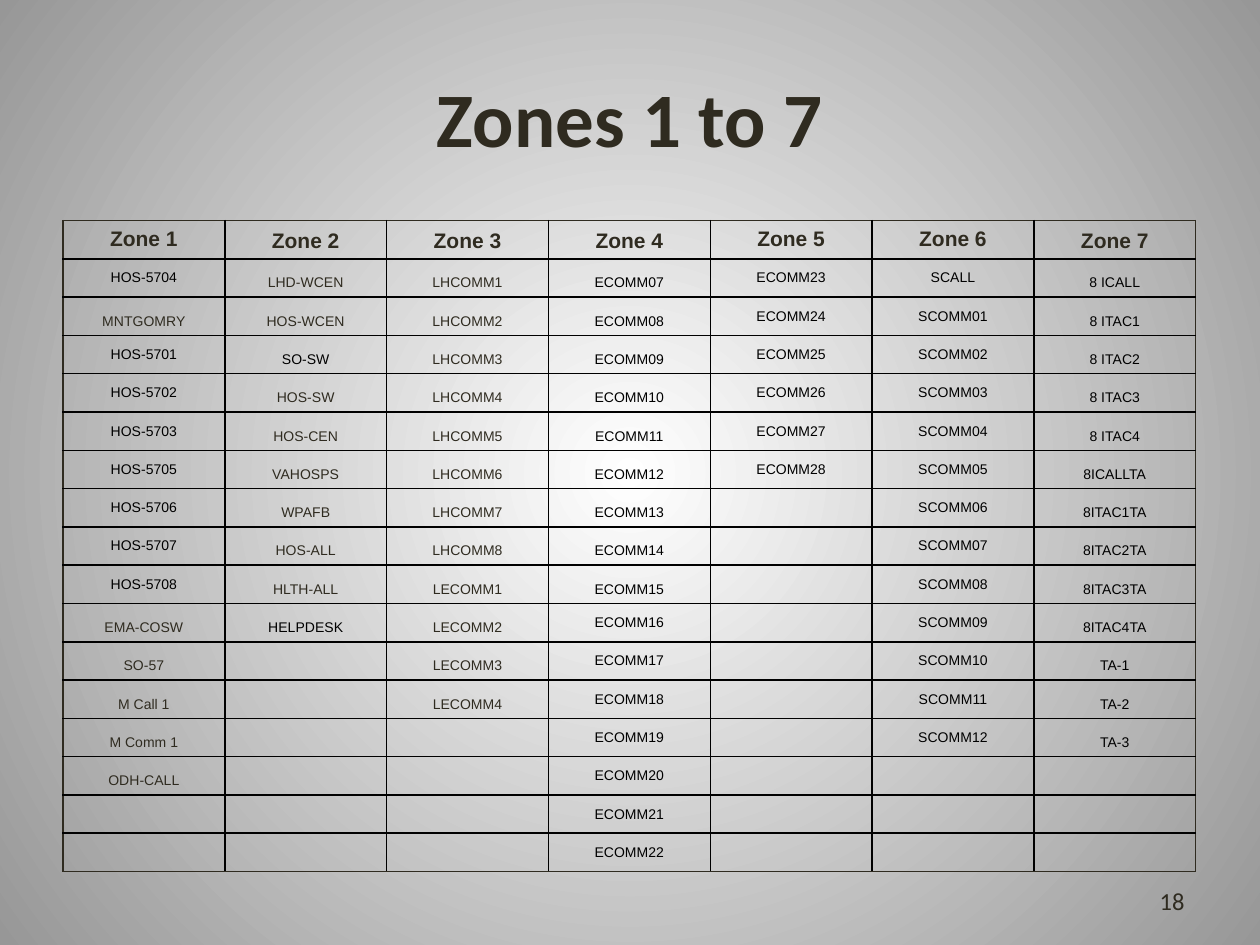
"""Build the radio channel table slide for zones 1 to 7."""
from dataclasses import dataclass

from lxml.etree import SubElement
from pptx import Presentation
from pptx.dml.color import RGBColor
from pptx.enum.text import MSO_ANCHOR as Anchor, PP_ALIGN as Align
from pptx.oxml.ns import qn
from pptx.util import Pt

INK = RGBColor(0x2F, 0x2B, 0x20)
BLACK = RGBColor(0x00, 0x00, 0x00)
GLOW = RGBColor(0xFF, 0xFF, 0xFF)
EDGE = RGBColor(0x97, 0x97, 0x97)
MIDDLE, BOTTOM = Anchor.MIDDLE, Anchor.BOTTOM
ROWS = 17
ROW_HEIGHT = 21.9
COLUMN_WIDTH = 92.47
CHANNEL_SIZE = 8


@dataclass(frozen=True)
class Group:
    channels: list[str]
    anchor: Anchor
    color: RGBColor


@dataclass(frozen=True)
class Zone:
    heading_anchor: Anchor
    groups: list[Group]


def numbered(prefix: str, first: int, last: int, digits: int = 1) -> list[str]:
    return [f"{prefix}{number:0{digits}}" for number in range(first, last + 1)]


ZONES = [
    Zone(MIDDLE, [
        Group(["HOS-5704"], MIDDLE, BLACK),
        Group(["MNTGOMRY"], BOTTOM, INK),
        Group(numbered("HOS-", 5701, 5703) + numbered("HOS-", 5705, 5708), MIDDLE, BLACK),
        Group(["EMA-COSW", "SO-57", "M Call 1", "M Comm 1", "ODH-CALL"], BOTTOM, INK),
    ]),
    Zone(BOTTOM, [
        Group(["LHD-WCEN", "HOS-WCEN"], BOTTOM, INK),
        Group(["SO-SW"], BOTTOM, BLACK),
        Group(["HOS-SW", "HOS-CEN", "VAHOSPS", "WPAFB", "HOS-ALL", "HLTH-ALL"], BOTTOM, INK),
        Group(["HELPDESK"], BOTTOM, BLACK),
    ]),
    Zone(BOTTOM, [Group(numbered("LHCOMM", 1, 8) + numbered("LECOMM", 1, 4), BOTTOM, INK)]),
    Zone(BOTTOM, [
        Group(numbered("ECOMM", 7, 15, 2), BOTTOM, BLACK),
        Group(numbered("ECOMM", 16, 22), MIDDLE, BLACK),
    ]),
    Zone(MIDDLE, [Group(numbered("ECOMM", 23, 28), MIDDLE, BLACK)]),
    Zone(MIDDLE, [Group(["SCALL"] + numbered("SCOMM", 1, 12, 2), MIDDLE, BLACK)]),
    Zone(BOTTOM, [Group(
        ["8 ICALL"] + numbered("8 ITAC", 1, 4) + ["8ICALLTA"]
        + [f"8ITAC{number}TA" for number in range(1, 5)] + numbered("TA-", 1, 3),
        BOTTOM, BLACK)]),
]


def paint_background(slide) -> None:
    fill = slide.background.fill
    fill.gradient()
    for stop, color in zip(fill.gradient_stops, (GLOW, EDGE)):
        stop.color.rgb = color
    gradient = slide.element.find(".//" + qn("a:gradFill"))
    gradient.remove(gradient.find(qn("a:lin")))
    circle = SubElement(gradient, qn("a:path"), path="circle")
    SubElement(circle, qn("a:fillToRect"), l="50000", t="50000", r="50000", b="50000")


def style(paragraph, align: Align, font: str, size: float, color: RGBColor, bold: bool = False) -> None:
    paragraph.alignment = align
    paragraph.font.name = font
    paragraph.font.size = Pt(size)
    paragraph.font.bold = bold
    paragraph.font.color.rgb = color


def add_label(slide, words: str, box: tuple, align: Align, size: float, bold: bool = False) -> None:
    frame = slide.shapes.add_textbox(*map(Pt, box)).text_frame
    frame.word_wrap = True
    frame.vertical_anchor = MIDDLE
    frame.text = words
    style(frame.paragraphs[0], align, "Calibri", size, INK, bold)


def add_borders(cell, row: int, column: int) -> None:
    outer = {"L": column == 0, "R": column == len(ZONES) - 1, "T": row == 0, "B": row == ROWS - 1}
    for side, is_outer in outer.items():
        line = SubElement(cell._tc.get_or_add_tcPr(), qn(f"a:ln{side}"), w=str(Pt(1)))
        solid = SubElement(line, qn("a:solidFill"))
        SubElement(solid, qn("a:srgbClr"), val=str(INK if is_outer else BLACK))


def write_cell(cell, words: str, anchor: Anchor, size: float, color: RGBColor, bold: bool = False) -> None:
    cell.text = words
    cell.vertical_anchor = anchor
    style(cell.text_frame.paragraphs[0], Align.CENTER, "Arial", size, color, bold)


def add_zone_table(slide) -> None:
    count = len(ZONES)
    table = slide.shapes.add_table(
        ROWS, count, Pt(36), Pt(126), Pt(COLUMN_WIDTH * count), Pt(ROW_HEIGHT * ROWS)).table
    table.first_row = table.horz_banding = False
    for row in table.rows:
        row.height = Pt(ROW_HEIGHT)
    for column, zone in enumerate(ZONES):
        table.columns[column].width = Pt(COLUMN_WIDTH)
        write_cell(table.cell(0, column), f"Zone {column + 1}", zone.heading_anchor, 12, INK, True)
        entries = [(channel, group) for group in zone.groups for channel in group.channels]
        for row, (channel, group) in enumerate(entries, 1):
            write_cell(table.cell(row, column), channel, group.anchor, CHANNEL_SIZE, group.color)
        for row in range(ROWS):
            cell = table.cell(row, column)
            add_borders(cell, row, column)
            cell.fill.background()
            if row > len(entries):
                paragraph = cell.text_frame.paragraphs[0]
                SubElement(paragraph._p, qn("a:endParaRPr"), sz=str(CHANNEL_SIZE * 100))


def main() -> None:
    deck = Presentation()
    deck.slide_width, deck.slide_height = Pt(720), Pt(540)
    slide = deck.slides.add_slide(deck.slide_layouts[6])
    paint_background(slide)
    add_label(slide, "Zones 1 to 7", (36, 21.6, 648, 90), Align.CENTER, 44, True)
    add_zone_table(slide)
    add_label(slide, "18", (516, 500.4, 168, 28.8), Align.RIGHT, 14)
    deck.save("out.pptx")


if __name__ == "__main__":
    main()
